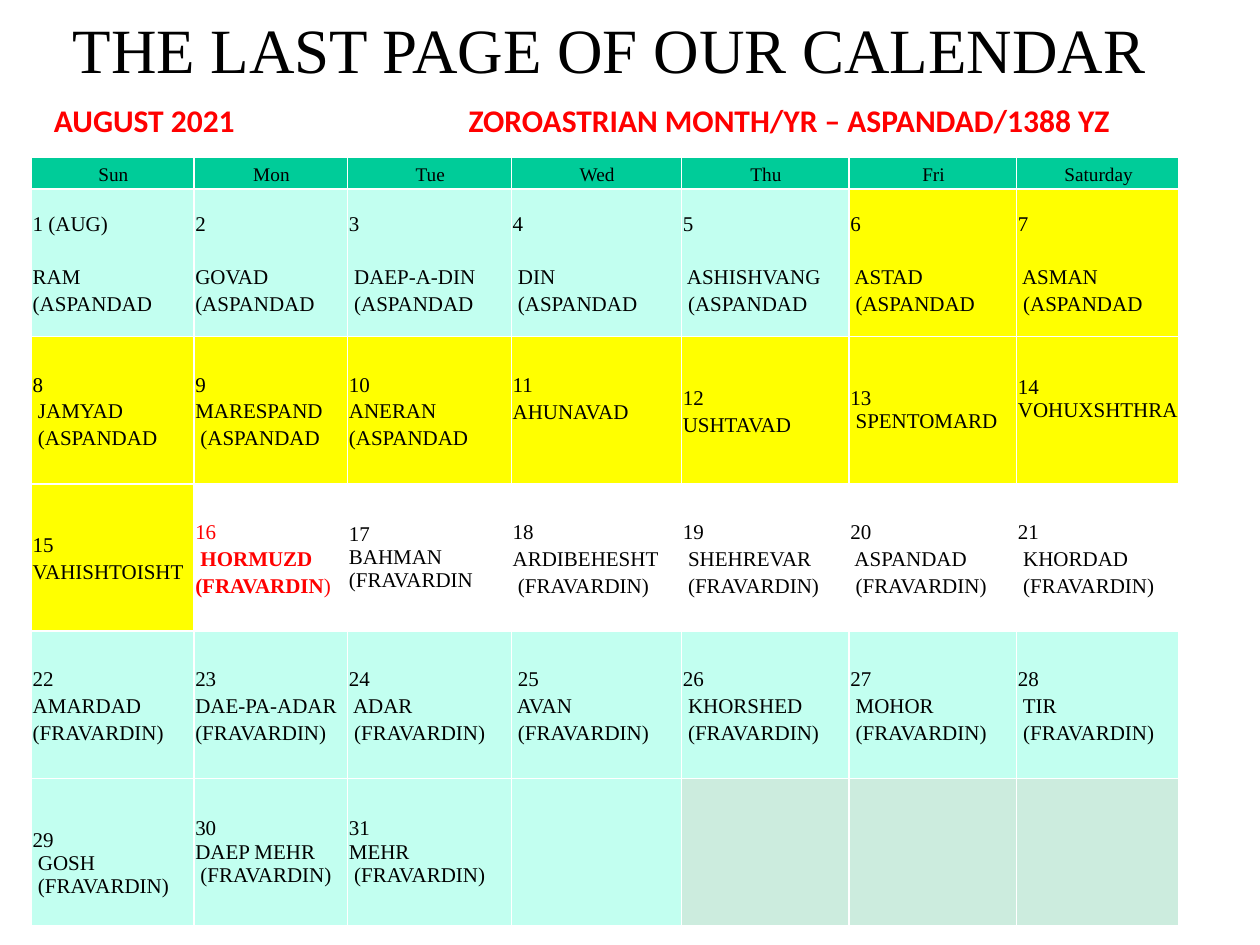
from lxml import etree
from pptx import Presentation
from pptx.dml.color import RGBColor
from pptx.enum.text import MSO_ANCHOR, PP_ALIGN
from pptx.oxml.ns import qn
from pptx.util import Emu, Inches, Pt

MIDDLE = MSO_ANCHOR.MIDDLE
CENTER, LEFT = PP_ALIGN.CENTER, PP_ALIGN.LEFT
BLACK = RGBColor(0x00, 0x00, 0x00)
RED = RGBColor(0xFF, 0x00, 0x00)
GREEN = RGBColor(0x00, 0xCC, 0x99)
MINT = RGBColor(0xC2, 0xFF, 0xF0)
YELLOW = RGBColor(0xFF, 0xFF, 0x00)
SAGE = RGBColor(0xCC, 0xEC, 0xDE)
SERIF = "Times New Roman"

DAYS = ["Sun", "Mon", "Tue", "Wed", "Thu", "Fri", "Saturday"]
WEEKS = [
    ["1 (AUG)\nRAM\n(ASPANDAD", "2\nGOVAD\n(ASPANDAD",
     "3\n DAEP-A-DIN\n (ASPANDAD", "4\n DIN\n (ASPANDAD",
     "5\n ASHISHVANG\n (ASPANDAD", "6\n ASTAD\n (ASPANDAD",
     "7\n ASMAN\n (ASPANDAD"],
    ["8\n JAMYAD\n (ASPANDAD", "9\nMARESPAND\n (ASPANDAD",
     "10\nANERAN\n(ASPANDAD", "11\nAHUNAVAD", "12\nUSHTAVAD",
     "13\n SPENTOMARD", "14\nVOHUXSHTHRA"],
    ["15\nVAHISHTOISHT", "16\n HORMUZD\n(FRAVARDIN)",
     "17\nBAHMAN\n(FRAVARDIN", "18\nARDIBEHESHT\n (FRAVARDIN)",
     "19\n SHEHREVAR\n (FRAVARDIN)", "20\n ASPANDAD\n (FRAVARDIN)",
     "21\n KHORDAD\n (FRAVARDIN)"],
    ["22\nAMARDAD\n(FRAVARDIN)", "23\nDAE-PA-ADAR\n(FRAVARDIN)",
     "24\n ADAR\n (FRAVARDIN)", " 25\n AVAN\n (FRAVARDIN)",
     "26\n KHORSHED\n (FRAVARDIN)", "27\n MOHOR\n (FRAVARDIN)",
     "28\n TIR\n (FRAVARDIN)"],
    ["29\n GOSH\n (FRAVARDIN)", "30\nDAEP MEHR\n (FRAVARDIN)",
     "31\nMEHR\n (FRAVARDIN)", "", "", "", ""],
]
COLS = [1.29, 1.22, 1.3, 1.35, 1.33, 1.33, 1.29]
HEAD, ROW = 0.25, 1.17
TIGHT = {13, 14, 17, 29, 30, 31}    # dates set in single spacing
LIFT = {11: 15, 14: 13}             # points of extra space below
DROP = {29: 13}                     # points of extra space above


def style(par, size, color=BLACK, font=SERIF, bold=False):
    par.font.size = Pt(size)
    par.font.name = font
    par.font.bold = bold
    par.font.color.rgb = color


def fill_cell(cell, text, size, align, color, space):
    """Write one paragraph per line into a table cell."""
    cell.vertical_anchor = MIDDLE
    cell.margin_left = cell.margin_top = cell.margin_bottom = Inches(0.01)
    cell.margin_right = 0
    cell.text = text
    for par in cell.text_frame.paragraphs:
        par.alignment = align
        par.line_spacing = space
        style(par, size, color)


deck = Presentation()
deck.slide_width, deck.slide_height = Inches(10), Inches(7.5)
slide = deck.slides.add_slide(deck.slide_layouts[5])

# Title
title = slide.shapes.title
title.left, title.top = Inches(0.42), Inches(0.18)
title.width, title.height = Inches(8.83), Inches(0.4)
title.text = "THE LAST PAGE OF OUR CALENDAR"
title.text_frame.vertical_anchor = MIDDLE
head = title.text_frame.paragraphs[0]
head.alignment = CENTER
style(head, 36)

# Calendar grid
grid = slide.shapes.add_table(
    len(WEEKS) + 1, len(DAYS), Inches(0.25), Inches(1.25),
    Inches(sum(COLS)), Inches(HEAD + ROW * len(WEEKS))).table
for col, width in zip(grid.columns, COLS):
    col.width = Inches(width)
for r, row in enumerate(grid.rows):
    row.height = Inches(ROW if r else HEAD)

# Weekday names
for c, day in enumerate(DAYS):
    cell = grid.cell(0, c)
    fill_cell(cell, day, 11, CENTER, BLACK, 1.15)
    cell.fill.solid()
    cell.fill.fore_color.rgb = GREEN

# Dates
for w, week in enumerate(WEEKS):
    for c, text in enumerate(week):
        date = w * 7 + c + 1
        cell = grid.cell(w + 1, c)
        fill_cell(cell, text, 12, LEFT, RED if date == 16 else BLACK,
                  1.0 if date in TIGHT else 1.15)
        if w == 0:
            cell.text_frame.paragraphs[0].space_after = Pt(15)
        cell.margin_bottom = Emu(cell.margin_bottom + Pt(LIFT.get(date, 0)))
        cell.margin_top = Emu(cell.margin_top + Pt(DROP.get(date, 0)))
        if 16 <= date <= 21:
            cell.fill.background()
        else:
            cell.fill.solid()
            cell.fill.fore_color.rgb = (
                YELLOW if 6 <= date <= 15 else SAGE if date > 32 else MINT)

# New year's day in bold
name, month = grid.cell(3, 1).text_frame.paragraphs[1:]
name.font.bold = month.font.bold = True
month.runs[0].text = "(FRAVARDIN"
end = month.add_run()
end.text = ")"
end.font.bold = False

# Month line, its second half set at a tab stop
box = slide.shapes.add_textbox(
    Inches(0.33), Inches(0.75), Inches(8.75), Inches(0.4))
box.text_frame.word_wrap = True
box.text_frame.vertical_anchor = MIDDLE
line = box.text_frame.paragraphs[0]
line.text = "AUGUST 2021\tZOROASTRIAN MONTH/YR – ASPANDAD/1388 YZ"
style(line, 18, RED, "Calibri", True)
props = line.font._element.getparent()
tabs = etree.Element(qn("a:tabLst"))
etree.SubElement(tabs, qn("a:tab"), pos=str(Inches(3.29)), algn="l")
props.insert(0, tabs)

deck.save("out.pptx")
